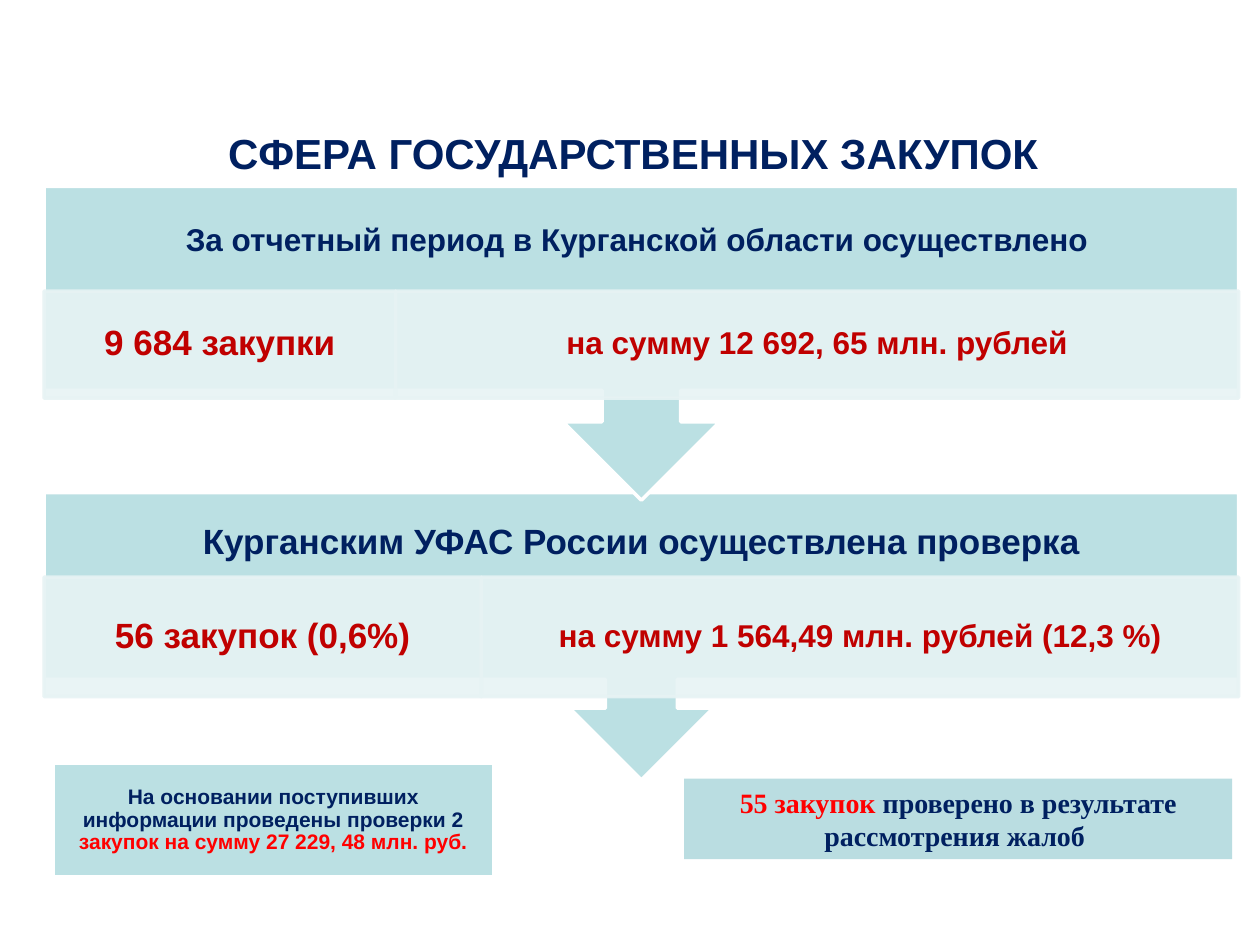
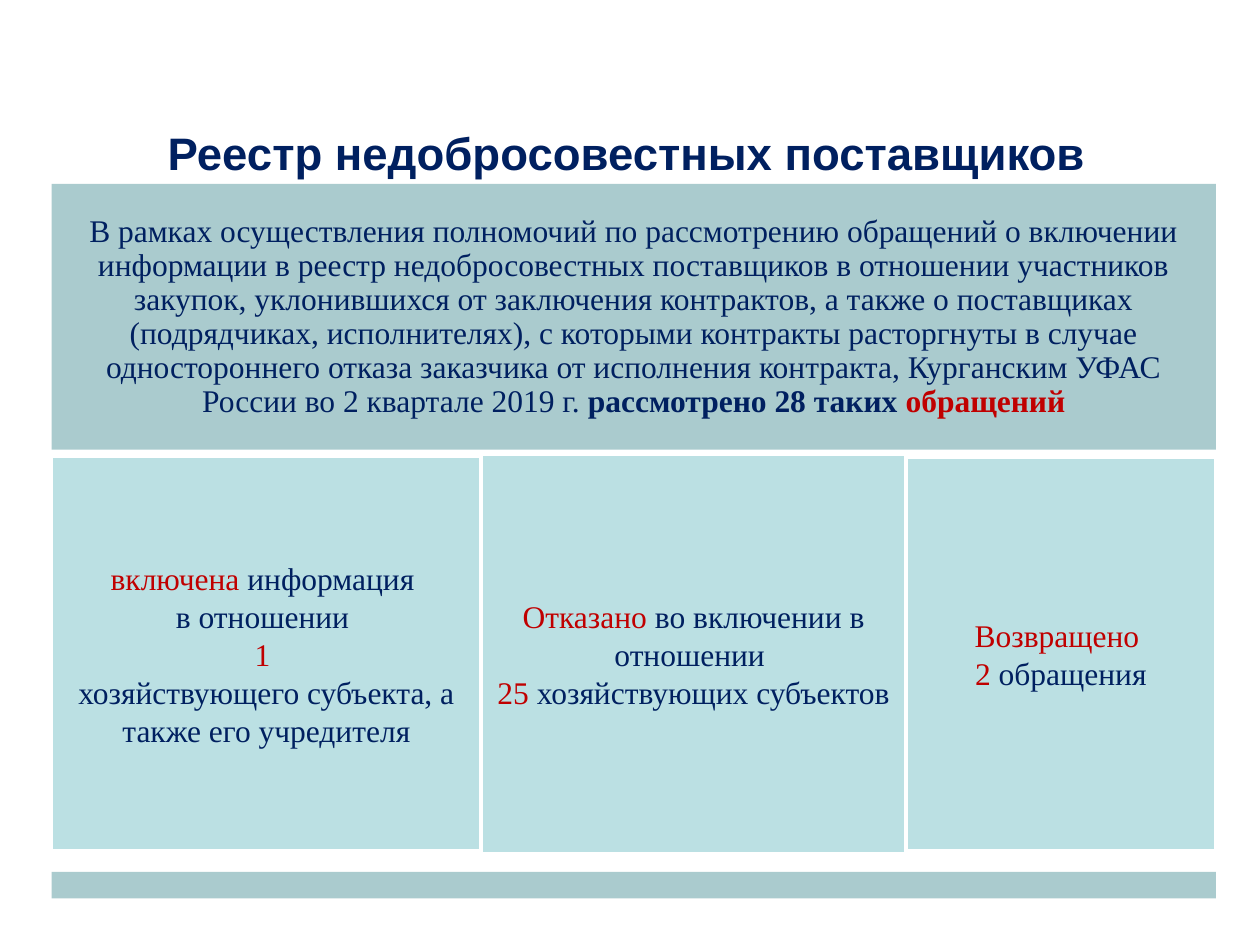
from lxml.etree import SubElement
from pptx import Presentation
from pptx.dml.color import RGBColor
from pptx.enum.shapes import MSO_SHAPE
from pptx.enum.text import MSO_ANCHOR, PP_ALIGN
from pptx.oxml.ns import qn
from pptx.util import Inches, Pt

NAVY = "002060"
DARK_RED = "C00000"
RED = "FF0000"
WHITE = "FFFFFF"
AQUA = "BBE0E3"
PALE_AQUA = "E7F3F4"
GREY_AQUA = "AACBCE"
SANS = "Arial"
SERIF = "Times New Roman"


def color(value):
    return RGBColor.from_string(value)


def set_opacity(color_format_parent, percent):
    for solid_fill in color_format_parent.iter(qn("a:solidFill")):
        alpha = SubElement(solid_fill[0], qn("a:alpha"))
        alpha.set("val", str(percent * 1000))


def write_text(shape, paragraphs, size, font=SANS, bold=True, spacing=1, insets=(0.1, 0.05)):
    frame = shape.text_frame
    frame.word_wrap = True
    frame.vertical_anchor = MSO_ANCHOR.MIDDLE
    frame.margin_left = frame.margin_right = Inches(insets[0])
    frame.margin_top = frame.margin_bottom = Inches(insets[1])
    for index, runs in enumerate(paragraphs):
        paragraph = frame.paragraphs[0] if index == 0 else frame.add_paragraph()
        paragraph.alignment = PP_ALIGN.CENTER
        paragraph.line_spacing = spacing
        paragraph.font.name = font
        paragraph.font.size = Pt(size)
        paragraph.font.bold = bold
        for text, run_color, *run_bold in runs:
            run = paragraph.add_run()
            run.text = text
            run.font.color.rgb = color(run_color)
            if run_bold:
                run.font.bold = run_bold[0]


def add_box(slide, box, fill, line=None, kind=MSO_SHAPE.RECTANGLE):
    shape = slide.shapes.add_shape(kind, *map(Inches, box))
    shape.shadow.inherit = False
    shape.fill.solid()
    shape.fill.fore_color.rgb = color(fill)
    if line:
        shape.line.color.rgb = color(line)
        shape.line.width = Pt(2)
    else:
        shape.line.fill.background()
    return shape


def add_label(slide, box, paragraphs, size, **style):
    label = slide.shapes.add_textbox(*map(Inches, box))
    write_text(label, paragraphs, size, **style)


def add_title(slide, text, top, height, size):
    add_label(slide, (0.26, top, 9.53, height), [[(text, NAVY)]], size)


def add_stage(slide, box, header, header_size, header_height, results_top, results_height, results):
    left, top, width, height = box
    callout = add_box(slide, box, AQUA, WHITE, MSO_SHAPE.UP_ARROW_CALLOUT)
    callout.rotation = 180
    add_label(slide, (left, top, width, header_height), [[(header, NAVY)]], header_size,
              spacing=0.9, insets=(0.15, 0.15))
    for text, size, result_width in results:
        cell = add_box(slide, (left, top + results_top, result_width, results_height),
                       PALE_AQUA, PALE_AQUA)
        set_opacity(cell.fill._xPr, 90)
        write_text(cell, [[(text, DARK_RED)]], size, spacing=0.9, insets=(0.15, 0.03))
        left += result_width


def add_procurement_slide(presentation):
    slide = presentation.slides.add_slide(presentation.slide_layouts[6])
    add_title(slide, "СФЕРА ГОСУДАРСТВЕННЫХ ЗАКУПОК", 0.88, 0.67, 24)

    information_checks = add_box(slide, (0.42, 6.06, 3.5, 0.9), AQUA, WHITE)
    write_text(information_checks, [[
        ("На основании поступивших информации проведены проверки 2", NAVY),
        (" закупок на сумму 27 229, 48 млн. руб.", RED),
    ]], 12, spacing=0.9, insets=(0.09, 0.09))

    add_stage(slide, (0.35, 3.91, 9.48, 2.28),
              "Курганским УФАС России осуществлена проверка", 20, 0.8, 0.67, 0.95,
              [("56 закупок (0,6%)", 20, 3.47),
               ("на сумму 1 564,49 млн. рублей (12,3 %)", 18, 6.01)])
    add_stage(slide, (0.35, 1.48, 9.48, 2.49),
              "За отчетный период в Курганской области осуществлено ", 18, 0.87, 0.83, 0.85,
              [("9 684 закупки", 20, 2.79),
               ("на сумму 12 692, 65 млн. рублей", 18, 6.69)])

    complaint_checks = add_box(slide, (5.43, 6.18, 4.35, 0.64), "BADDE1")
    write_text(complaint_checks, [[
        ("55 закупок ", RED),
        ("проверено в результате рассмотрения жалоб ", NAVY),
    ]], 16, font=SERIF)


def add_outcomes(slide, left, middle, outcomes):
    for width, height, paragraphs in outcomes:
        outcome = add_box(slide, (left, middle - height / 2, width, height), AQUA, WHITE)
        write_text(outcome, paragraphs, 18, font=SERIF, bold=False, insets=(0.07, 0.07))
        left += width


def add_registry_slide(presentation):
    slide = presentation.slides.add_slide(presentation.slide_layouts[6])
    add_title(slide, "Реестр недобросовестных поставщиков ", 0.82, 0.77, 26)

    left, width = 0.41, 9.24
    summary = add_box(slide, (left, 1.46, width, 2.11), GREY_AQUA)
    write_text(summary, [[
        ("В рамках осуществления полномочий по рассмотрению обращений о включении "
         "информации в реестр недобросовестных поставщиков в отношении участников закупок, "
         "уклонившихся от заключения контрактов, а также о поставщиках (подрядчиках, "
         "исполнителях), с которыми контракты расторгнуты в случае одностороннего отказа "
         "заказчика от исполнения контракта, Курганским УФАС России во 2 квартале 2019 г. ",
         NAVY),
        ("рассмотрено 28 таких ", NAVY, True),
        ("обращений", DARK_RED, True),
    ]], 18, font=SERIF, bold=False, spacing=0.9, insets=(0.07, 0.07))

    add_outcomes(slide, left, 5.19, [
        (3.41, 3.13, [
            [("включена ", DARK_RED), ("информация ", NAVY)],
            [("в отношении ", NAVY)],
            [("1 ", DARK_RED)],
            [("хозяйствующего субъекта, а также его учредителя", NAVY)],
        ]),
        (3.37, 3.17, [
            [("Отказано ", DARK_RED), ("во включении в отношении ", NAVY)],
            [("25 ", DARK_RED), ("хозяйствующих субъектов", NAVY)],
        ]),
        (2.46, 3.12, [
            [("Возвращено ", DARK_RED)],
            [("2 ", DARK_RED), ("обращения", NAVY)],
        ]),
    ])
    add_box(slide, (left, 6.92, width, 0.21), GREY_AQUA)


def main():
    presentation = Presentation()
    presentation.slide_width = Inches(10)
    presentation.slide_height = Inches(7.5)
    add_procurement_slide(presentation)
    add_registry_slide(presentation)
    presentation.save("out.pptx")


if __name__ == "__main__":
    main()
